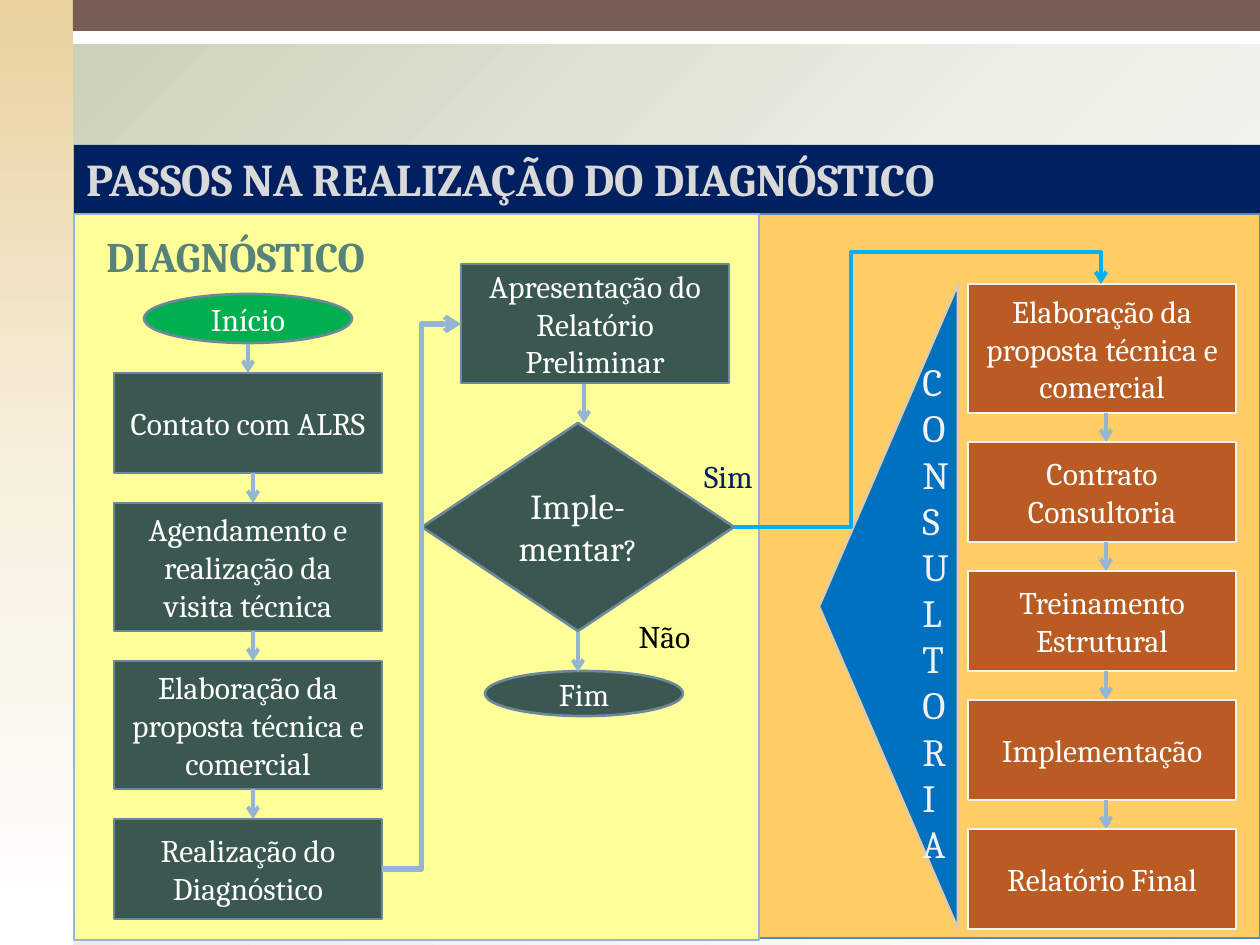
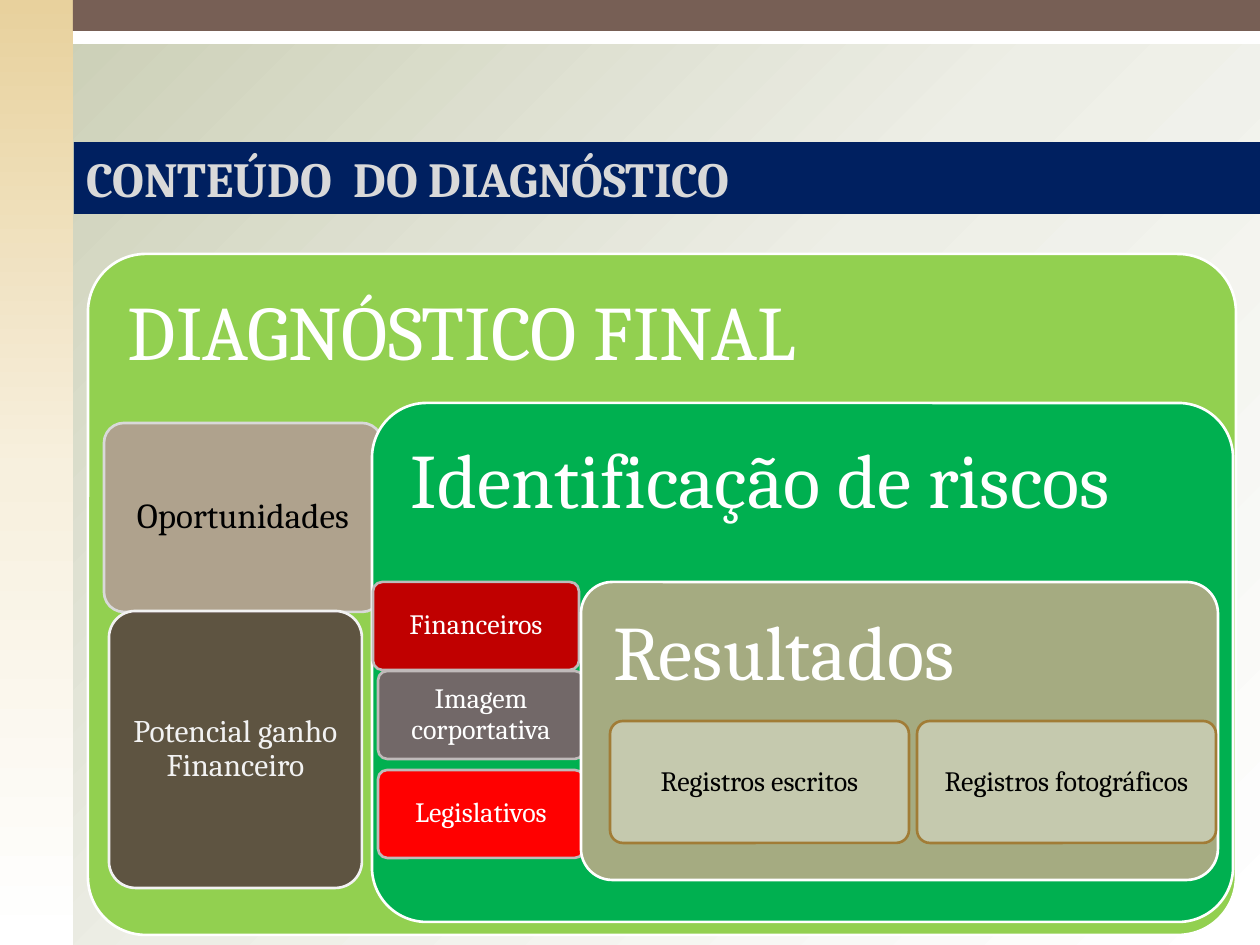
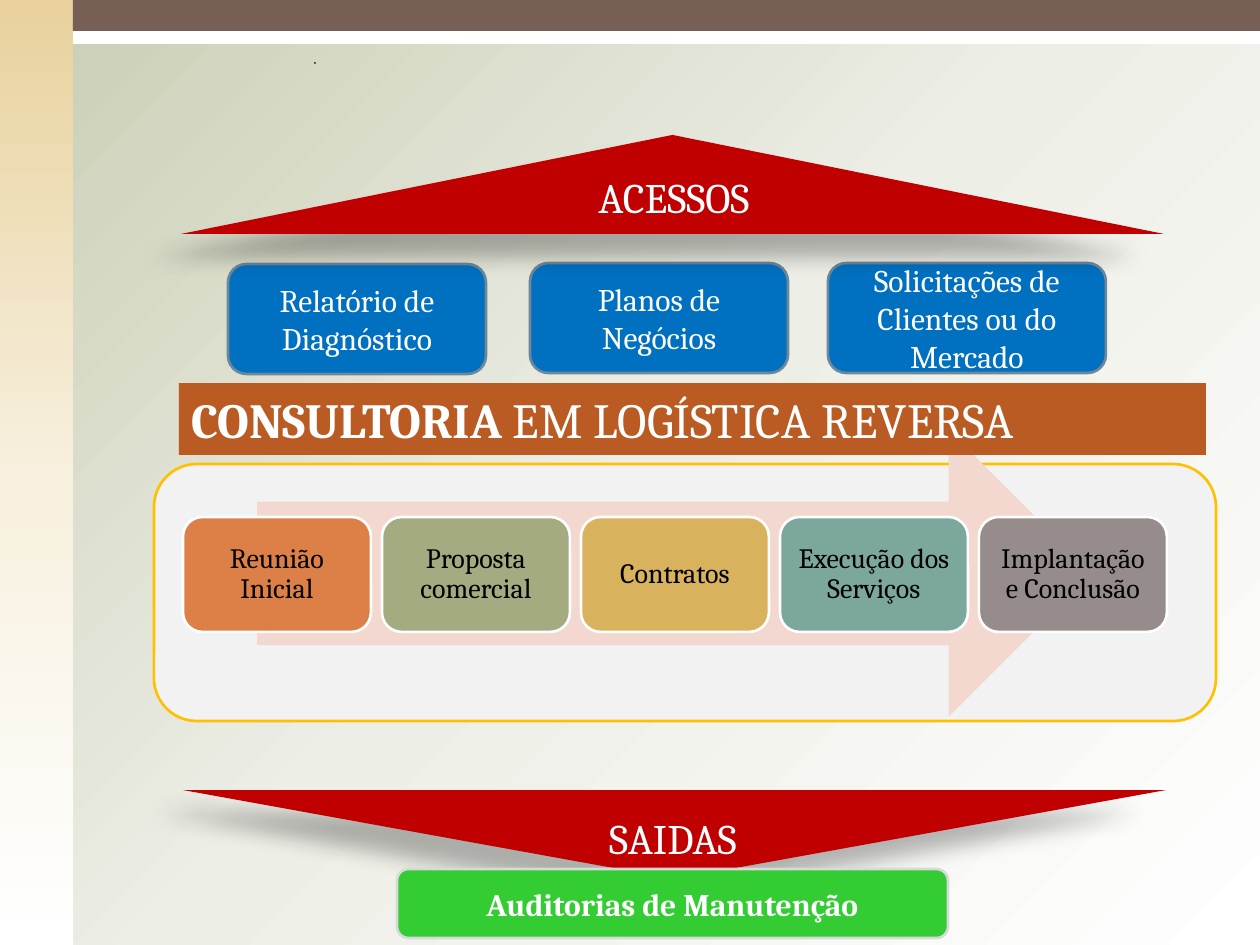
from copy import deepcopy

from lxml import etree
from pptx import Presentation
from pptx.dml.color import RGBColor
from pptx.enum.shapes import MSO_CONNECTOR, MSO_SHAPE
from pptx.enum.text import MSO_ANCHOR, PP_ALIGN
from pptx.oxml.ns import qn
from pptx.util import Emu, Pt

RECT = MSO_SHAPE.RECTANGLE
ROUND = MSO_SHAPE.ROUNDED_RECTANGLE
OVAL = MSO_SHAPE.OVAL
DIAMOND = MSO_SHAPE.DIAMOND
ROOF = MSO_SHAPE.ISOSCELES_TRIANGLE
ARROW = MSO_SHAPE.RIGHT_ARROW
LINE = MSO_CONNECTOR.STRAIGHT
ELBOW = MSO_CONNECTOR.ELBOW
TOP, MIDDLE = MSO_ANCHOR.TOP, MSO_ANCHOR.MIDDLE
LEFT, CENTER = PP_ALIGN.LEFT, PP_ALIGN.CENTER

WHITE = RGBColor(0xFF, 0xFF, 0xFF)
BLACK = RGBColor(0x00, 0x00, 0x00)
PALE = RGBColor(0xF2, 0xF2, 0xF2)
SILVER = RGBColor(0xD9, 0xD9, 0xD9)
NAVY = RGBColor(0x00, 0x20, 0x60)
BLUE = RGBColor(0x00, 0x70, 0xC0)
SKY = RGBColor(0x00, 0xB0, 0xF0)
STEEL = RGBColor(0x94, 0xB6, 0xD2)
SLATE = RGBColor(0x6D, 0x87, 0x9B)
EDGE = RGBColor(0x55, 0x8B, 0xB8)
PINE = RGBColor(0x3A, 0x57, 0x50)
TEAL = RGBColor(0x57, 0x82, 0x79)
MINT = RGBColor(0x7B, 0xA7, 0x9D)
GREEN = RGBColor(0x00, 0xB0, 0x50)
LIME = RGBColor(0x92, 0xD0, 0x50)
GRASS = RGBColor(0x33, 0xCC, 0x33)
SAGE = RGBColor(0xA5, 0xAB, 0x81)
MOSS = RGBColor(0xC9, 0xCD, 0xB3)
MIST = RGBColor(0xED, 0xEE, 0xE6)
SAND = RGBColor(0xE8, 0xD1, 0x9D)
CREAM = RGBColor(0xF7, 0xF0, 0xDE)
TAN = RGBColor(0xE0, 0xCB, 0xA3)
YELLOW = RGBColor(0xFF, 0xFF, 0x99)
PEACH = RGBColor(0xFF, 0xCC, 0x66)
AMBER = RGBColor(0xFF, 0xC0, 0x00)
GOLD = RGBColor(0xD8, 0xB2, 0x5C)
BRONZE = RGBColor(0xA1, 0x7C, 0x36)
ORANGE = RGBColor(0xDD, 0x80, 0x47)
RUST = RGBColor(0xB9, 0x5B, 0x22)
BLUSH = RGBColor(0xF2, 0xD8, 0xCF)
BROWN = RGBColor(0x77, 0x5F, 0x55)
TAUPE = RGBColor(0xB3, 0x9D, 0x94)
UMBER = RGBColor(0x59, 0x47, 0x40)
ASH = RGBColor(0x96, 0x8C, 0x8C)
SMOKE = RGBColor(0x72, 0x68, 0x68)
FOG = RGBColor(0xC0, 0xBA, 0xBA)
WINE = RGBColor(0xC0, 0x00, 0x00)
RED = RGBColor(0xFF, 0x00, 0x00)

FONT = "Cambria"
SCALE = 914400 / 126
WIDE, HIGH = 1260, 945


def px(*sizes):
    return [Emu(round(size * SCALE)) for size in sizes]


def blend(fill, colors, angle):
    fill.gradient()
    stops = fill.gradient_stops._gsLst
    stops.insert(1, deepcopy(stops[0]))
    for stop, color, place in zip(fill.gradient_stops, colors, (0, 0.5, 1)):
        stop.color.rgb = color
        stop.position = place
    fill.gradient_angle = 360 - angle


class Deck:
    def __init__(self):
        self.show = Presentation()
        self.show.slide_width, self.show.slide_height = px(WIDE, HIGH)

    def start(self):
        self.slide = self.show.slides.add_slide(self.show.slide_layouts[6])
        blend(self.slide.background.fill, (MOSS, MIST, WHITE), 45)
        self.box(RECT, (0, 0, WIDE, 44), WHITE)
        side = self.box(RECT, (0, 0, 73, HIGH), SAND)
        blend(side.fill, (SAND, CREAM, WHITE), 90)
        self.box(RECT, (73, 0, WIDE - 73, 31), BROWN)

    def put(self, shape, text, size=18, color=WHITE, bold=False,
            align=CENTER, anchor=MIDDLE, inset=None, space=None):
        frame = shape.text_frame
        frame.word_wrap = True
        frame.vertical_anchor = anchor
        if inset is not None:
            pad = px(inset)[0]
            frame.margin_left = frame.margin_right = pad
            frame.margin_top = frame.margin_bottom = pad
        frame.text = text
        for part in frame.paragraphs:
            part.alignment = align
            part.line_spacing = space
            part.font.name = FONT
            part.font.size = Pt(size)
            part.font.bold = bold
            part.font.color.rgb = color

    def box(self, kind, at, fill, line=None, text=None, **style):
        shape = self.slide.shapes.add_shape(kind, *px(*at))
        shape.shadow.inherit = False
        shape.fill.solid()
        shape.fill.fore_color.rgb = fill
        if line is None:
            shape.line.fill.background()
        else:
            shape.line.color.rgb = line
            shape.line.width = Pt(1.5)
        if text:
            self.put(shape, text, **style)
        return shape

    def label(self, at, text, **style):
        shape = self.slide.shapes.add_textbox(*px(*at))
        self.put(shape, text, anchor=TOP, **style)

    def band(self, at, text, size=28, fill=NAVY, color=SILVER):
        return self.box(RECT, at, fill, None, text, size=size, color=color,
                        bold=True, align=LEFT, anchor=TOP)

    def card(self, at, fill, line, text, curve=0.105, clear=False, **style):
        style = {"size": 16, "inset": 9, "space": 0.9} | style
        shape = self.box(ROUND, at, fill, line, text, **style)
        shape.adjustments[0] = curve
        if clear:
            tint = shape._element.spPr.find(qn("a:solidFill"))[0]
            etree.SubElement(tint, qn("a:alpha"), val="90000")

    def panel(self, at, fill, text, curve=0.105):
        self.card(at, fill, WHITE, text, curve, size=44, inset=23,
                  align=LEFT, anchor=TOP)

    def roof(self, at, turn=0):
        shape = self.box(ROOF, at, WINE)
        shape.rotation = turn
        effect = shape._element.spPr.find(qn("a:effectLst"))
        shade = etree.SubElement(
            effect, qn("a:outerShdw"), blurRad=str(Pt(11.8)),
            dist=str(Pt(19.7)), dir=str(141 * 60000), rotWithShape="0")
        tint = etree.SubElement(shade, qn("a:srgbClr"), val=str(BLACK))
        etree.SubElement(tint, qn("a:alpha"), val="28000")

    def arrow(self, start, end, kind=LINE, color=STEEL, width=2.25):
        wire = self.slide.shapes.add_connector(kind, *px(*start, *end))
        wire.line.color.rgb = color
        wire.line.width = Pt(width)
        etree.SubElement(wire.line._get_or_add_ln(), qn("a:tailEnd"), type="arrow")
        etree.SubElement(wire._element.spPr, qn("a:effectLst"))
        return wire

    def chain(self, x, y, gap, mid, fill, line, steps):
        for i, (text, high) in enumerate(steps):
            if i:
                self.arrow((mid, y - gap), (mid, y))
            self.box(RECT, (x, y, 268, high), fill, line, text)
            y += high + gap


def steps_slide(deck):
    deck.start()
    deck.box(RECT, (759, 214, 501, 724), PEACH, EDGE)
    deck.box(RECT, (74, 214, 685, 726), YELLOW, STEEL)
    deck.band((74, 145, 1186, 68), "PASSOS NA REALIZAÇÃO DO DIAGNÓSTICO", 26)

    deck.box(OVAL, (144, 294, 208, 49), GREEN, SLATE, "Início")
    deck.chain(114, 373, 30, 253, PINE, SLATE, [
        ("Contato com ALRS", 100),
        ("Agendamento e realização da visita técnica", 128),
        ("Elaboração da proposta técnica e comercial", 128),
        ("Realização do Diagnóstico", 100)])
    deck.box(RECT, (461, 264, 268, 119), PINE, SLATE,
             "Apresentação do Relatório Preliminar")
    choice = deck.box(DIAMOND, (422, 423, 312, 208), PINE, SLATE,
                      "Imple-\nmentar", size=20)
    mark = choice.text_frame.paragraphs[1].add_run()
    mark.text = "?"
    mark.font.size = Pt(18)
    deck.box(OVAL, (485, 671, 198, 45), PINE, SLATE, "Fim")
    deck.chain(968, 284, 29, 1106, RUST, PALE, [
        ("Elaboração da proposta técnica e comercial", 129),
        ("Contrato Consultoria", 100),
        ("Treinamento Estrutural", 100),
        ("Implementação", 100),
        ("Relatório Final", 100)])

    deck.arrow((248, 344), (248, 373))
    deck.arrow((382, 869), (461, 324), ELBOW, width=3)
    deck.arrow((584, 384), (584, 423))
    deck.arrow((578, 632), (578, 672))
    deck.label((684, 451, 89, 50), "Sim", color=NAVY)
    deck.label((620, 611, 89, 50), "Não", color=BLACK)

    wedge = deck.box(ROOF, (566, 537, 645, 139), BLUE, TAN)
    wedge.rotation = 270
    deck.label((910, 352, 49, 525), "CONSULTORIA", size=22, color=PALE, align=LEFT)
    wire = deck.arrow((734, 527), (1101, 284), ELBOW, SKY)
    shape = wire._element.spPr.find(qn("a:prstGeom"))
    shape.set("prst", "bentConnector4")
    guides = shape.find(qn("a:avLst"))
    for name, value in (("adj1", 31800), ("adj2", 113000)):
        etree.SubElement(guides, qn("a:gd"), name=name, fmla=f"val {value}")
    deck.label((94, 224, 387, 63), "DIAGNÓSTICO", size=24, color=TEAL,
               bold=True, align=LEFT)


def content_slide(deck):
    deck.start()
    deck.panel((88, 254, 1148, 681), LIME, "DIAGNÓSTICO FINAL", 0.085)
    deck.card((104, 423, 278, 189), TAUPE, SILVER, "Oportunidades",
              clear=True, size=20, color=BLACK)
    deck.card((109, 611, 253, 277), UMBER, PALE, "Potencial ganho Financeiro",
              clear=True, size=18, color=PALE)
    deck.panel((372, 403, 861, 519), GREEN, "Identificação de riscos")
    for x, y, fill, text in (
            (373, 582, WINE, "Financeiros"),
            (378, 671, SMOKE, "Imagem corportativa"),
            (378, 770, RED, "Legislativos")):
        deck.card((x, y, 206, 88), fill, FOG, text)
    deck.panel((581, 582, 637, 298), SAGE, "Resultados")
    for x, text in ((610, "Registros escritos"), (917, "Registros fotográficos")):
        deck.card((x, 721, 299, 122), MOSS, BRONZE, text, clear=True, color=BLACK)
    deck.band((74, 142, 1186, 72), "CONTEÚDO  DO DIAGNÓSTICO")


def advice_slide(deck):
    deck.start()
    deck.box(ROUND, (154, 464, 1062, 257), PALE, AMBER)
    dot = deck.box(RECT, (315, 63, 0, 0), STEEL, BLACK)
    dot.line.width = Pt(0.75)
    deck.box(ARROW, (257, 430, 835, 287), BLUSH)
    phases = ((ORANGE, "Reunião Inicial"), (SAGE, "Proposta comercial"),
              (GOLD, "Contratos"), (MINT, "Execução dos Serviços"),
              (ASH, "Implantação e Conclusão"))
    for i, (fill, text) in enumerate(phases):
        deck.card((183 + 199 * i, 517, 188, 115), fill, WHITE, text,
                  curve=0.17, color=BLACK)

    deck.roof((183, 790, 983, 89), 180)
    deck.label((504, 806, 338, 63), "SAIDAS", size=24)
    deck.box(ROUND, (397, 869, 551, 69), GRASS, SILVER,
             "Auditorias de Manutenção", bold=True)
    for x, y, wide, text in (
            (228, 264, 258, "Relatório de Diagnóstico"),
            (530, 263, 258, "Planos de Negócios"),
            (828, 263, 278, "Solicitações de Clientes ou do Mercado")):
        deck.box(ROUND, (x, y, wide, 110), BLUE, SLATE, text)
    deck.roof((181, 135, 983, 99))
    deck.label((505, 165, 338, 63), "ACESSOS", size=24)
    band = deck.band((179, 383, 1027, 72), "CONSULTORIA ", fill=RUST, color=WHITE)
    rest = band.text_frame.paragraphs[0].add_run()
    rest.text = "EM LOGÍSTICA REVERSA"
    rest.font.bold = False


def main():
    deck = Deck()
    steps_slide(deck)
    content_slide(deck)
    advice_slide(deck)
    deck.show.save("out.pptx")


if __name__ == "__main__":
    main()
